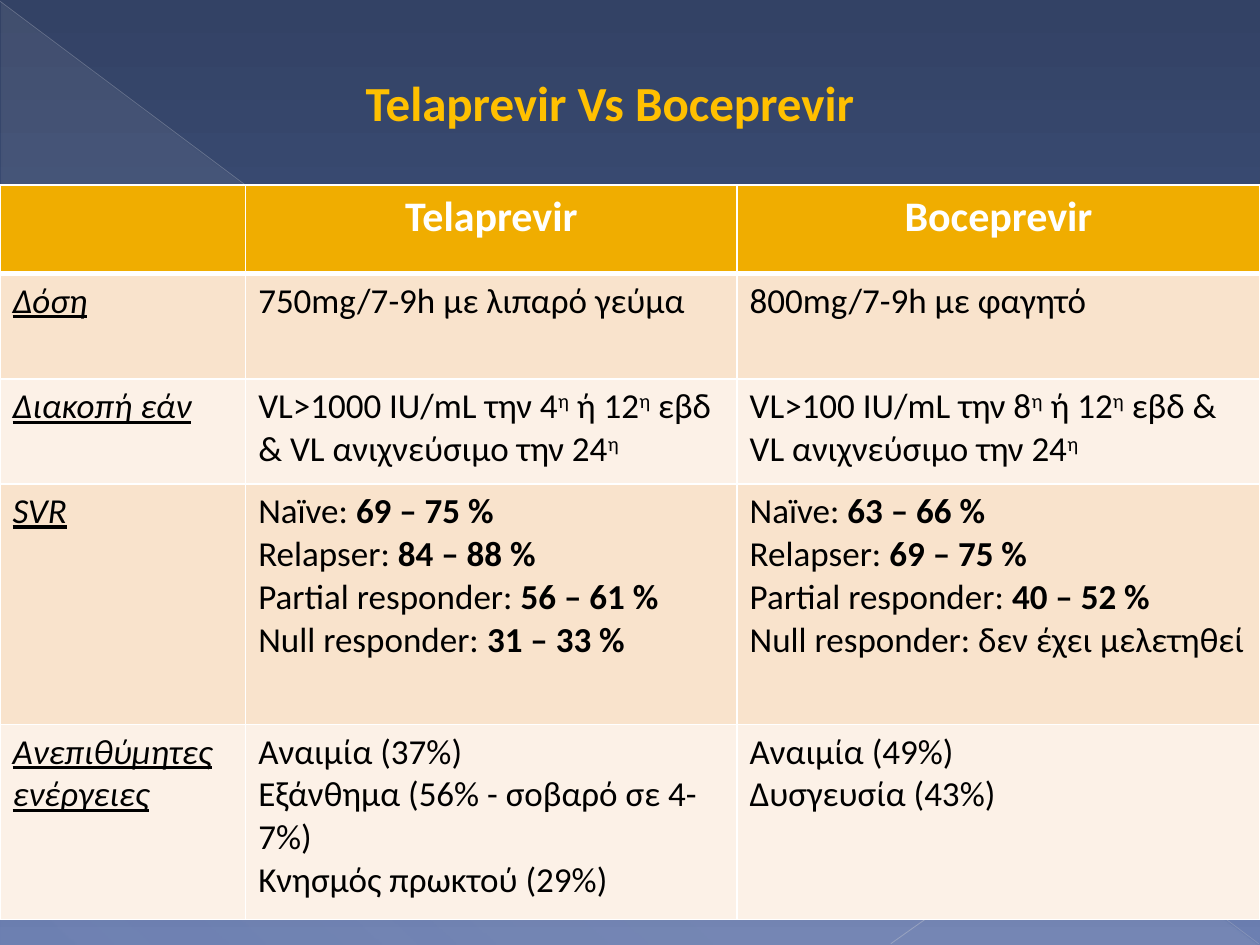
from dataclasses import dataclass
from lxml.etree import SubElement as Sub
from pptx import Presentation
from pptx.dml.color import RGBColor as Rgb
from pptx.enum.shapes import MSO_CONNECTOR as Conn, MSO_SHAPE as Shape
from pptx.enum.text import MSO_ANCHOR as Anchor, PP_ALIGN as Align
from pptx.oxml.ns import qn
from pptx.util import Inches, Pt


@dataclass(frozen=True)
class Theme:
    font: str = "Calibri"
    gold: str = "FFC000"
    head: str = "F0AD00"
    dark: str = "F9E3CC"
    light: str = "FCF1E7"
    white: str = "FFFFFF"
    black: str = "000000"
    glow: str = "D4D4D6"
    edge: str = "B9BDC8"
    ray: str = "C1C4CE"
    sky: tuple = ("334265", "445887", "6C7FB1")
    title: int = 28
    label: int = 24
    body: int = 20


def write(frame, text, size=20, color="000000", bold=False, italic=False, under=False, align=Align.LEFT):
    frame.word_wrap = True
    for i, line in enumerate(text.split("\n")):
        para = frame.add_paragraph() if i else frame.paragraphs[0]
        para.alignment = align
        for part in line.split("|"):
            run = para.add_run()
            run.text = part.lstrip("*^")
            font = run.font
            font.name, font.size = theme.font, Pt(size)
            font.color.rgb = Rgb.from_string(color)
            font.bold = bold or part.startswith("*")
            font.italic, font.underline = italic, under
            if part.startswith("^"):
                run._r.get_or_add_rPr().set("baseline", "30000")


def shade(fill, root, stops, angle):
    fill.gradient()
    grad = next(root.iter(qn("a:gradFill")))
    for child in list(grad):
        grad.remove(child)
    group = Sub(grad, qn("a:gsLst"))
    for pos, color, alpha in stops:
        stop = Sub(group, qn("a:gs"), pos=str(pos * 1000))
        tint = Sub(stop, qn("a:srgbClr"), val=color)
        Sub(tint, qn("a:alpha"), val=str(alpha * 1000))
    Sub(grad, qn("a:lin"), ang=str(angle * 60000), scaled="0")


theme = Theme()
deck = Presentation()
deck.slide_width, deck.slide_height = Inches(10), Inches(7.5)
slide = deck.slides.add_slide(deck.slide_layouts[5])
shapes = slide.shapes
sky = [(pos, color, 100) for pos, color in zip((0, 60, 100), theme.sky)]
shade(slide.background.fill, slide._element, sky, 90)

wedge = shapes.add_shape(Shape.RIGHT_TRIANGLE, Inches(0.01), Inches(0.02), Inches(9.98), Inches(7.48))
wedge.shadow.inherit = False
wedge.line.fill.background()
glow = [(0, theme.glow, 10), (70, theme.glow, 8), (100, theme.glow, 1)]
shade(wedge.fill, wedge._element, glow, 133)

for ends, color, width, alpha in (
    ((0, 0.01, 9.99, 7.49), theme.edge, 0.39, 35),
    ((10, 5.41, 7.07, 7.49), theme.ray, 0.47, 45),
):
    line = shapes.add_connector(Conn.STRAIGHT, *map(Inches, ends))
    line.line.color.rgb = Rgb.from_string(color)
    line.line.width = Pt(width)
    tint = next(line._element.iter(qn("a:srgbClr")))
    Sub(tint, qn("a:alpha"), val=str(alpha * 1000))
    Sub(line._element.spPr, qn("a:effectLst"))

rows = [
    ("", "Telaprevir", "Boceprevir"),
    ("Δόση", "750mg/7-9h με λιπαρό γεύμα", "800mg/7-9h με φαγητό"),
    (
        "Διακοπή εάν",
        "VL>1000 IU/mL την 4|^η| ή 12|^η| εβδ & VL ανιχνεύσιμο την 24|^η",
        "VL>100 IU/mL την 8|^η| ή 12|^η| εβδ & VL ανιχνεύσιμο την 24|^η",
    ),
    (
        "SVR",
        "Naïve: |*69 – 75 %\nRelapser: |*84 – 88 %\nPartial responder: |*56 – 61 %\nNull responder: |*31 – 33 %",
        "Naïve: |*63 – 66 %\nRelapser: |*69 – 75 %\nPartial responder: |*40 – 52 %\nNull responder: δεν έχει μελετηθεί",
    ),
    (
        "Ανεπιθύμητες ενέργειες",
        "Αναιμία (37%)\nΕξάνθημα (56% - σοβαρό σε 4-7%)\nΚνησμός πρωκτού (29%)",
        "Αναιμία (49%)\nΔυσγευσία (43%)",
    ),
]
widths = (1.95, 3.9, 4.15)
heights = (0.7, 0.84, 0.83, 1.91, 1.55)
table = shapes.add_table(len(rows), len(widths), 0, Inches(1.47), Inches(10), Inches(5.83)).table
for col, width in zip(table.columns, widths):
    col.width = Inches(width)
for row, height in zip(table.rows, heights):
    row.height = Inches(height)

for r, row in enumerate(rows):
    for c, text in enumerate(row):
        cell = table.cell(r, c)
        props = cell._tc.get_or_add_tcPr()
        for side in "LRTB":
            thick = (r, side) in ((0, "B"), (1, "T"))
            edge = Sub(props, qn(f"a:ln{side}"), w=str(Pt(3 if thick else 1)))
            Sub(Sub(edge, qn("a:solidFill")), qn("a:srgbClr"), val=theme.white)
        cell.fill.solid()
        shade_name = theme.head if r == 0 else theme.dark if r % 2 else theme.light
        cell.fill.fore_color.rgb = Rgb.from_string(shade_name)
        props.append(props.find(qn("a:solidFill")))
        if r == 0:
            if text:
                write(cell.text_frame, text, size=theme.label, color=theme.white, bold=True, align=Align.CENTER)
        else:
            write(cell.text_frame, text, size=theme.body, color=theme.black, italic=c == 0, under=c == 0)

title = shapes.title
title.left, title.top, title.width, title.height = map(Inches, (0.35, 0.52, 8.98, 0.57))
title.text_frame.vertical_anchor = Anchor.MIDDLE
write(title.text_frame, "Telaprevir Vs Boceprevir", size=theme.title, color=theme.gold, bold=True, align=Align.CENTER)
shapes._spTree.append(title._element)

deck.save("out.pptx")
